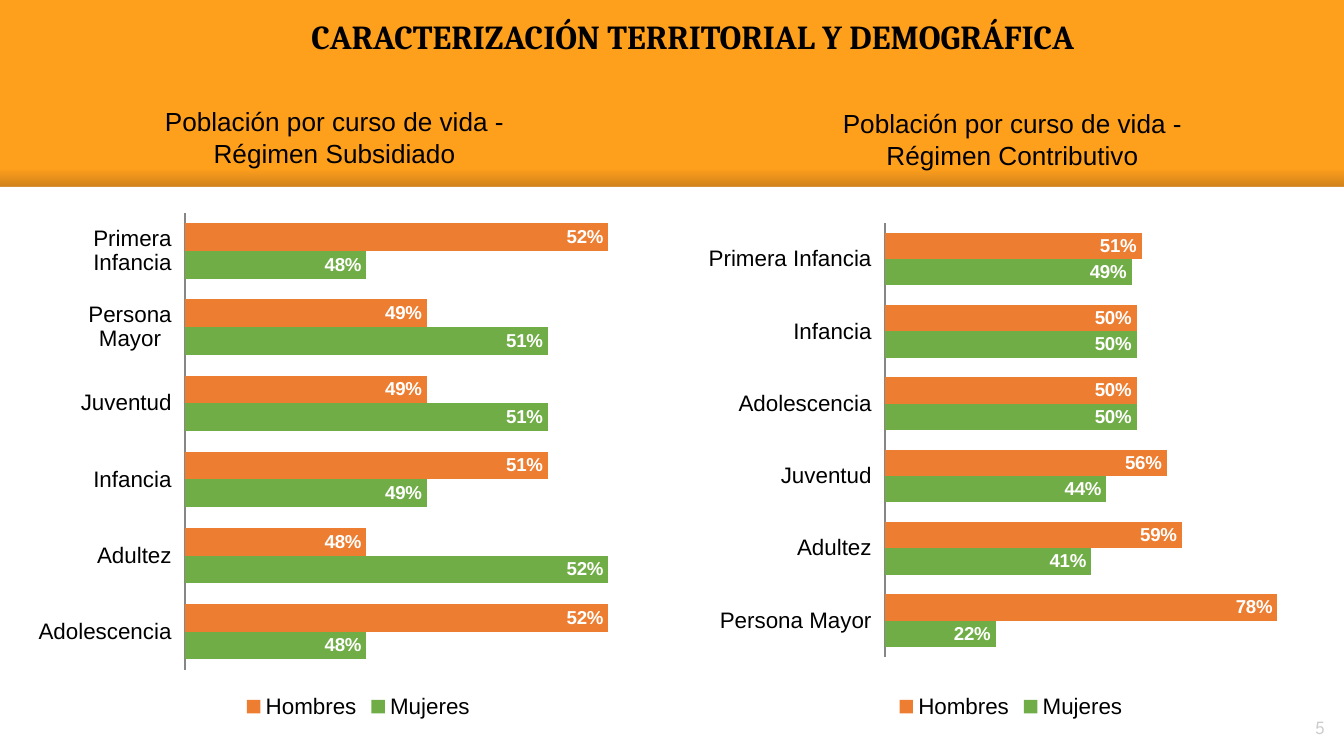
from lxml import etree
from pptx import Presentation
from pptx.chart.data import CategoryChartData
from pptx.dml.color import RGBColor
from pptx.enum.chart import (XL_CHART_TYPE, XL_LABEL_POSITION,
                             XL_LEGEND_POSITION, XL_TICK_LABEL_POSITION,
                             XL_TICK_MARK)
from pptx.enum.shapes import MSO_SHAPE
from pptx.enum.text import MSO_ANCHOR, PP_ALIGN
from pptx.oxml.ns import qn
from pptx.util import Pt

PX = 914400 / 134.4

BARS = XL_CHART_TYPE.BAR_CLUSTERED
INSIDE = XL_LABEL_POSITION.INSIDE_END
BOTTOM = XL_LEGEND_POSITION.BOTTOM
NO_TICK = XL_TICK_MARK.NONE
LOW = XL_TICK_LABEL_POSITION.LOW
RECT = MSO_SHAPE.RECTANGLE
TOP, MIDDLE = MSO_ANCHOR.TOP, MSO_ANCHOR.MIDDLE
CENTER, RIGHT = PP_ALIGN.CENTER, PP_ALIGN.RIGHT

AMBER = RGBColor(0xFF, 0xA0, 0x1D)
WHITE = RGBColor(0xFF, 0xFF, 0xFF)
BLACK = RGBColor(0, 0, 0)
SHADE = RGBColor(0, 0, 0x14)
PALE = RGBColor(0xCC, 0xCC, 0xCC)
GRAY = RGBColor(0x86, 0x86, 0x86)
GREEN = RGBColor(0x70, 0xAD, 0x47)
ORANGE = RGBColor(0xED, 0x7D, 0x31)

SUBSIDIZED = [("Adolescencia", 0.48, 0.52), ("Adultez", 0.52, 0.48),
              ("Infancia", 0.49, 0.51), ("Juventud", 0.51, 0.49),
              ("Persona Mayor", 0.51, 0.49), ("Primera Infancia", 0.48, 0.52)]
PAYING = [("Persona Mayor", 0.22, 0.78), ("Adultez", 0.41, 0.59),
          ("Juventud", 0.44, 0.56), ("Adolescencia", 0.5, 0.5),
          ("Infancia", 0.5, 0.5), ("Primera Infancia", 0.49, 0.51)]


def px(*sizes):
    return [round(size * PX) for size in sizes]


def add_rect(slide, box):
    rect = slide.shapes.add_shape(RECT, *px(*box))
    rect.shadow.inherit = False
    rect.line.fill.background()
    return rect


def add_shade(slide, box):
    """Add a strip that fades out from its bottom edge to its top."""
    fill = add_rect(slide, box).fill
    fill.gradient()
    fill.gradient_angle = 90
    for stop, alpha in zip(fill.gradient_stops, (20000, 0)):
        stop.color.rgb = SHADE
    for color, alpha in zip(fill._xPr.iter(qn("a:srgbClr")), (20000, 0)):
        etree.SubElement(color, qn("a:alpha"), val=str(alpha))


def set_font(font, size, color=BLACK, name="Arial", bold=False):
    font.size = Pt(size)
    font.color.rgb = color
    font.name = name
    font.bold = bold


def add_text(slide, box, text, size, align=CENTER, anchor=TOP, **style):
    frame = slide.shapes.add_textbox(*px(*box)).text_frame
    frame.word_wrap = True
    frame.vertical_anchor = anchor
    para = frame.paragraphs[0]
    para.alignment = align
    run = para.add_run()
    run.text = text
    set_font(run.font, size, **style)


def set_plot(chart, box, plot):
    """Fix the inner plot area, given in slide px, within the chart box."""
    area = chart._chartSpace.chart.plotArea
    for old in area.findall(qn("c:layout")):
        area.remove(old)
    layout = etree.Element(qn("c:layout"))
    area.insert(0, layout)
    manual = etree.SubElement(layout, qn("c:manualLayout"))
    left, top, width, height = box
    x, y, w, h = plot
    parts = [("layoutTarget", "inner"), ("xMode", "edge"), ("yMode", "edge"),
             ("x", (x - left) / width), ("y", (y - top) / height),
             ("w", w / width), ("h", h / height)]
    for tag, val in parts:
        etree.SubElement(manual, qn("c:" + tag), val=str(val))


def add_bars(slide, box, plot, rows, low, high):
    names, women, men = zip(*rows)
    data = CategoryChartData(number_format="0%")
    data.categories = names
    data.add_series("Mujeres", women)
    data.add_series("Hombres", men)
    chart = slide.shapes.add_chart(BARS, *px(*box), data).chart
    set_font(chart.font, 10)
    chart.has_title = False
    chart.has_legend = True
    chart.legend.position = BOTTOM
    chart.legend.include_in_layout = False
    set_font(chart.legend.font, 12)

    axis = chart.category_axis
    axis.major_tick_mark = axis.minor_tick_mark = NO_TICK
    axis.tick_label_position = LOW
    axis.format.line.color.rgb = GRAY
    set_font(axis.tick_labels.font, 12)
    scale = chart.value_axis
    scale.minimum_scale, scale.maximum_scale = low, high
    scale.has_major_gridlines = False
    scale.visible = False

    bars = chart.plots[0]
    bars.gap_width, bars.overlap = 75, 0
    bars.vary_by_categories = False
    for series, color in zip(bars.series, (GREEN, ORANGE)):
        series.format.fill.solid()
        series.format.fill.fore_color.rgb = color
        labels = series.data_labels
        labels.show_value = True
        labels.number_format = "0%"
        labels.number_format_is_linked = False
        labels.position = INSIDE
        set_font(labels.font, 10, WHITE, bold=True)
    set_plot(chart, box, plot)


def main():
    deck = Presentation()
    deck.slide_width, deck.slide_height = px(1344, 756)
    slide = deck.slides.add_slide(deck.slide_layouts[6])
    slide.background.fill.solid()
    slide.background.fill.fore_color.rgb = AMBER

    add_shade(slide, (0, 170, 1344, 17))
    panel = add_rect(slide, (0, 187, 1344, 569))
    panel.fill.solid()
    panel.fill.fore_color.rgb = WHITE

    add_text(slide, (1258, 698, 80, 58), "5", 10, RIGHT, MIDDLE,
             color=PALE, name="League Spartan")
    add_text(slide, (111, 9, 1164, 54),
             "CARACTERIZACIÓN TERRITORIAL Y DEMOGRÁFICA", 18,
             name="Cambria", bold=True)
    add_text(slide, (118, 99, 433, 77),
             "Población por curso de vida - Régimen Subsidiado", 14)
    add_text(slide, (777, 101, 471, 77),
             "Población por curso de vida - Régimen Contributivo", 14)

    add_bars(slide, (34, 203, 649, 521), (185, 213, 484, 457),
             SUBSIDIZED, 0.45, 0.53)
    add_bars(slide, (683, 203, 656, 521), (885, 223, 453, 434),
             PAYING, 0, 0.9)
    deck.save("out.pptx")


if __name__ == "__main__":
    main()
